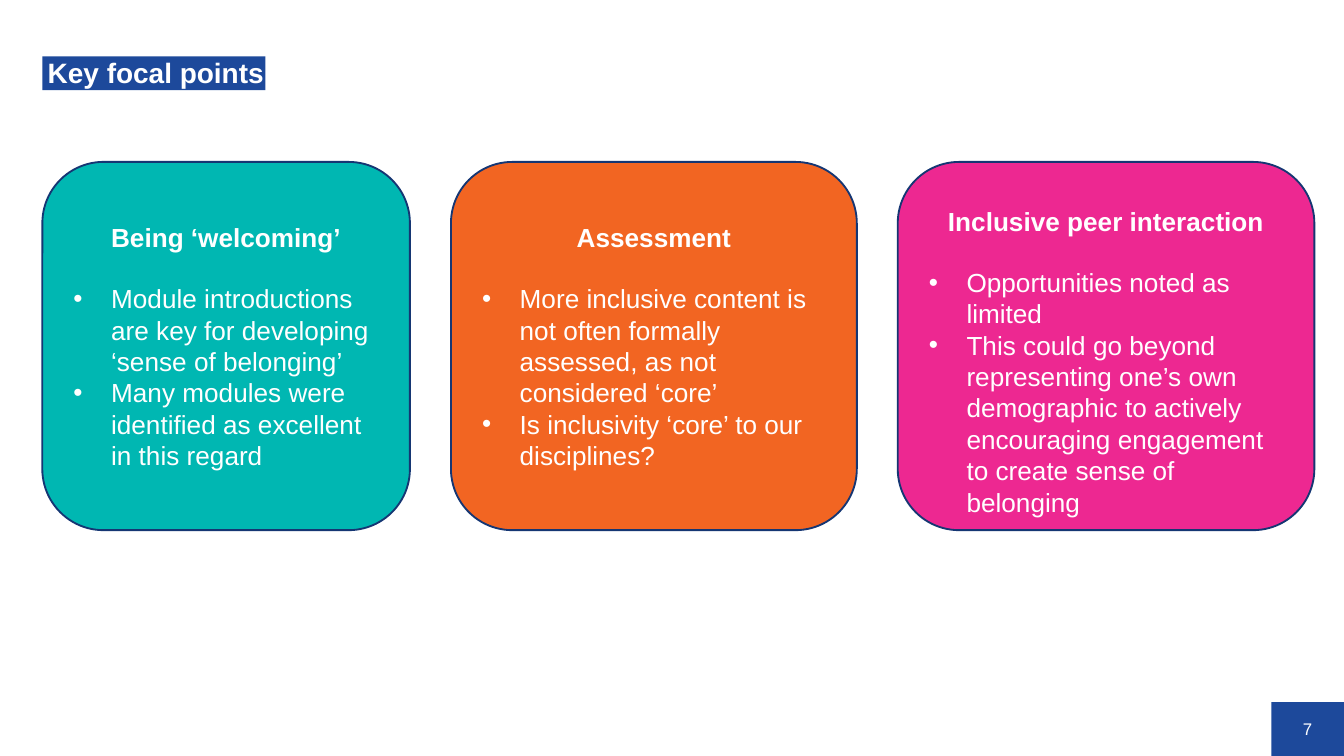
from dataclasses import dataclass

from lxml import etree
from pptx import Presentation
from pptx import util as u
from pptx.dml.color import RGBColor
from pptx.enum import shapes, text
from pptx.oxml.ns import qn

COLUMNS, ROWS = 100, 56.25
CELL = u.Inches(0.1)
MARGIN, GAP = 3.15, 3.05
CARD_TOP, CARD_ROWS = 12.05, 27.4
LINE_GAP = u.Pt(16.1)
BULLET_INDENT = u.Inches(0.28)
COLORS = {
    "white": "FFFFFF",
    "blue": "1D499B",
    "navy": "153673",
    "teal": "00B7B2",
    "orange": "F26522",
    "pink": "ED2891",
}


@dataclass
class Area:
    column: float
    row: float
    columns: float
    rows: float


@dataclass
class Card:
    heading: str
    points: list[str]
    color: str
    columns: float
    blank_top: int = 0


CARDS = [
    Card("Being ‘welcoming’",
         ["Module introductions are key for developing ‘sense of belonging’",
          "Many modules were identified as excellent in this regard"],
         "teal", 27.35),
    Card("Assessment",
         ["More inclusive content is not often formally assessed, as not considered ‘core’",
          "Is inclusivity ‘core’ to our disciplines?"],
         "orange", 30.2),
    Card("Inclusive peer interaction",
         ["Opportunities noted as limited",
          "This could go beyond representing one’s own demographic to actively "
          "encouraging engagement to create sense of belonging"],
         "pink", 31, LINE_GAP),
]


def rgb(name: str) -> RGBColor:
    return RGBColor.from_string(COLORS[name])


def apply(target, values: dict) -> None:
    for name, value in values.items():
        setattr(target, name, value)


def add_box(page, kind, area: Area, color: str, frame_format: dict, outline: str = ""):
    sides = (area.column, area.row, area.columns, area.rows)
    box = page.shapes.add_shape(kind, *(int(side * CELL) for side in sides))
    box.shadow.inherit = False
    box.fill.solid()
    box.fill.fore_color.rgb = rgb(color)
    if outline:
        box.line.color.rgb = rgb(outline)
        box.line.width = u.Pt(1)
    else:
        box.line.fill.background()
    apply(box.text_frame, {"vertical_anchor": text.MSO_ANCHOR.MIDDLE,
                           "word_wrap": True, **frame_format})
    return box


def write(para, words: str, size: float, bold: bool = False, **para_format) -> None:
    apply(para, {"alignment": text.PP_ALIGN.LEFT, **para_format})
    span = para.add_run()
    span.text = words
    apply(span.font, {"name": "Arial", "size": u.Pt(size), "bold": bold})
    span.font.color.rgb = rgb("white")


def add_bullet(para) -> None:
    props = para._p.get_or_add_pPr()
    props.set("marL", str(BULLET_INDENT))
    props.set("indent", str(-BULLET_INDENT))
    etree.SubElement(props, qn("a:buFont")).set("typeface", "Arial")
    etree.SubElement(props, qn("a:buChar")).set("char", "•")


def add_card(page, card: Card, column: float) -> None:
    area = Area(column, CARD_TOP, card.columns, CARD_ROWS)
    box = add_box(page, shapes.MSO_SHAPE.FLOWCHART_ALTERNATE_PROCESS, area, card.color,
                  {"margin_top": u.Inches(0.05) + card.blank_top}, "navy")
    frame = box.text_frame
    write(frame.paragraphs[0], card.heading, 14, True,
          alignment=text.PP_ALIGN.CENTER, space_after=LINE_GAP)
    for point in card.points:
        para = frame.add_paragraph()
        write(para, point, 14)
        add_bullet(para)


def main() -> None:
    deck = Presentation()
    deck.slide_width, deck.slide_height = int(COLUMNS * CELL), int(ROWS * CELL)
    page = deck.slides.add_slide(deck.slide_layouts[6])
    rectangle = shapes.MSO_SHAPE.RECTANGLE
    flush = {"margin_left": 0, "margin_top": 0, "margin_right": 0, "margin_bottom": 0}

    number = add_box(page, rectangle, Area(COLUMNS - 5.4, ROWS - 4, 5.4, 4), "blue", flush)
    write(number.text_frame.paragraphs[0], "7", 9, alignment=text.PP_ALIGN.CENTER)

    title = add_box(page, rectangle, Area(MARGIN, 4.2, 16.6, 2.5), "blue",
                    {**flush, "margin_left": u.Inches(0.04),
                     "margin_top": u.Inches(0.02), "word_wrap": False})
    write(title.text_frame.paragraphs[0], "Key focal points", 15, True, line_spacing=0.9)

    column = MARGIN
    for card in CARDS:
        add_card(page, card, column)
        column += card.columns + GAP

    deck.save("out.pptx")


if __name__ == "__main__":
    main()
